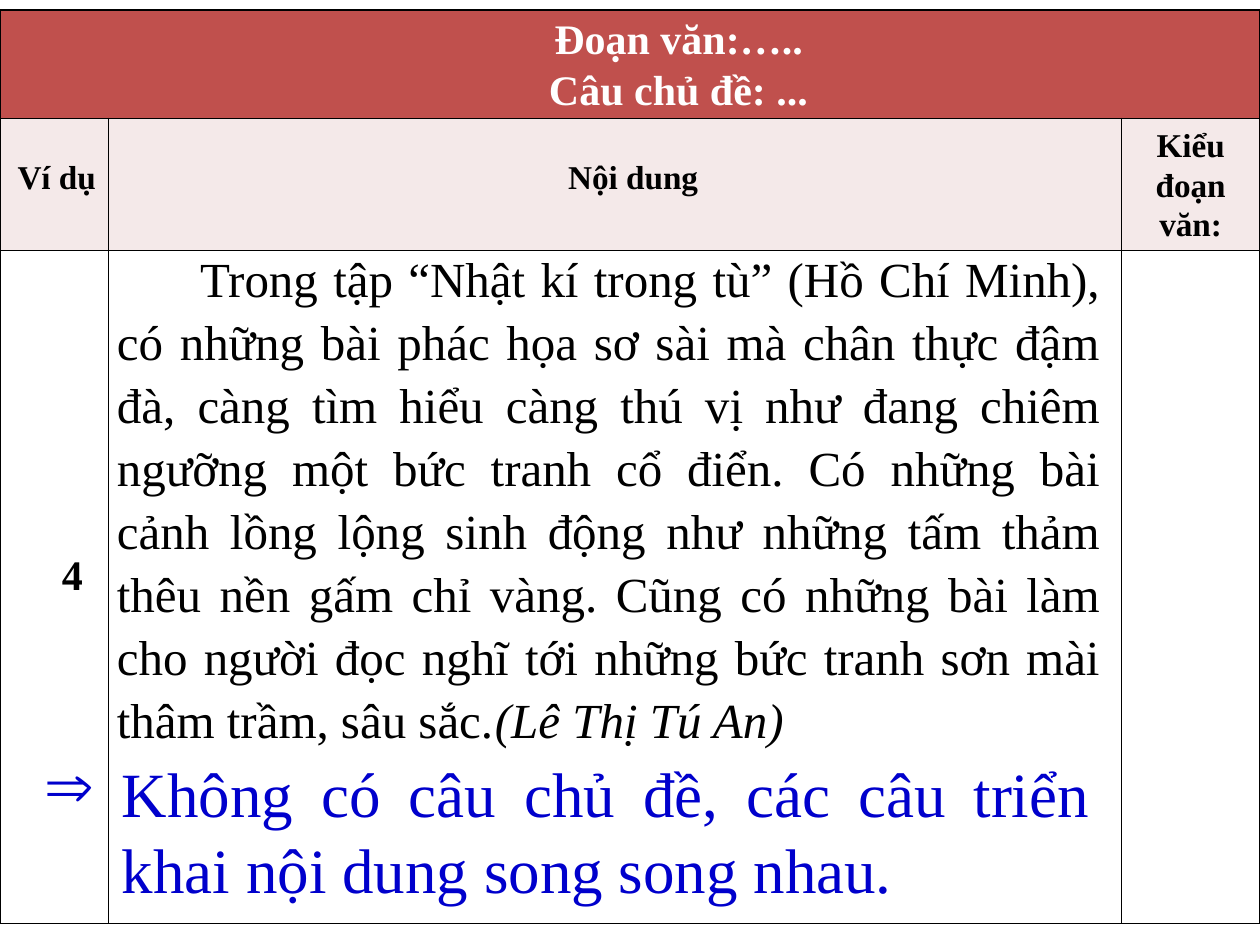
from pptx import Presentation
from pptx.dml.color import RGBColor
from pptx.enum.text import MSO_ANCHOR, PP_ALIGN
from pptx.oxml.ns import qn
from pptx.util import Inches, Pt
from lxml.etree import SubElement

FONT = "Times New Roman"
BLACK = RGBColor(0x00, 0x00, 0x00)
WHITE = RGBColor(0xFF, 0xFF, 0xFF)
RED = RGBColor(0xC0, 0x50, 0x4D)
PINK = RGBColor(0xF4, 0xE9, 0xE9)
BLUE = RGBColor(0x00, 0x00, 0xCC)

COLS = [0.86, 8.04, 1.1]
ROWS = [0.86, 1.05, 5.34]
FILLS = [RED, PINK, WHITE]
TIGHT = Pt(13.8)

POEM = (
    "Trong tập “Nhật kí trong tù” (Hồ Chí Minh), có những bài phác họa sơ sài "
    "mà chân thực đậm đà, càng tìm hiểu càng thú vị như đang chiêm ngưỡng một "
    "bức tranh cổ điển. Có những bài cảnh lồng lộng sinh động như những tấm "
    "thảm thêu nền gấm chỉ vàng. Cũng có những bài làm cho người đọc nghĩ tới "
    "những bức tranh sơn mài thâm trầm, sâu sắc.\t"
)
AUTHOR = "(Lê Thị Tú An)"
NOTE = "Không có câu chủ đề, các câu triển khai nội dung song song nhau."


def style(run, size, color=BLACK, bold=False, italic=False):
    font = run.font
    font.name, font.size = FONT, Pt(size)
    font.bold, font.italic = bold, italic
    font.color.rgb = color


def indent(para, left, first):
    props = para._p.get_or_add_pPr()
    props.set("marL", str(Inches(left)))
    props.set("indent", str(Inches(first)))
    return props


def border(cell):
    props = cell._tc.get_or_add_tcPr()
    for side in ("lnL", "lnR", "lnT", "lnB"):
        line = SubElement(props, qn(f"a:{side}"), w=str(Pt(1)))
        fill = SubElement(line, qn("a:solidFill"))
        SubElement(fill, qn("a:srgbClr"), val=str(BLACK))


def write(cell, text, size, color=BLACK, left=0, first=0, space=TIGHT, before=0):
    cell.text_frame.text = text
    for para in cell.text_frame.paragraphs:
        para.alignment = PP_ALIGN.CENTER
        para.line_spacing = space
        para.space_before = Pt(before)
        indent(para, left, first)
        for run in para.runs:
            style(run, size, color, bold=True)


def add_grid(slide):
    frame = slide.shapes.add_table(
        len(ROWS), len(COLS), Inches(0), Inches(0.08),
        Inches(sum(COLS)), Inches(sum(ROWS)))
    table = frame.table
    for col, width in zip(table.columns, COLS):
        col.width = Inches(width)
    for row, height, fill in zip(table.rows, ROWS, FILLS):
        row.height = Inches(height)
        for cell in row.cells:
            border(cell)
            cell.fill.solid()
            cell.fill.fore_color.rgb = fill
            cell.vertical_anchor = MSO_ANCHOR.MIDDLE
            cell.margin_left = cell.margin_right = Inches(0.03)
            cell.margin_top = cell.margin_bottom = 0
    table.cell(0, 0).merge(table.cell(0, 2))
    return table


def add_box(slide, left, top, width, height):
    box = slide.shapes.add_textbox(
        Inches(left), Inches(top), Inches(width), Inches(height))
    box.text_frame.word_wrap = True
    para = box.text_frame.paragraphs[0]
    para.alignment = PP_ALIGN.JUSTIFY
    return para


def main():
    prs = Presentation()
    prs.slide_width, prs.slide_height = Inches(10), Inches(7.5)
    slide = prs.slides.add_slide(prs.slide_layouts[6])

    # Table with heading, column names and example number
    table = add_grid(slide)
    write(table.cell(0, 0), "Đoạn văn:…..\nCâu chủ đề: ...", 24, WHITE,
          left=0.77, space=1.07, before=0.4)
    write(table.cell(1, 0), "Ví dụ", 19, first=0.04)
    write(table.cell(1, 1), "Nội dung", 19, left=0.29)
    write(table.cell(1, 2), "Kiểu đoạn văn:", 19, space=1.07)
    write(table.cell(2, 0), "4", 24, left=0.29)

    # Example paragraph, with its author set at a tab stop
    para = add_box(slide, 0.83, 1.89, 8, 4.61)
    para.line_spacing = 1.07
    tabs = SubElement(indent(para, 0, 0.66), qn("a:tabLst"))
    SubElement(tabs, qn("a:tab"), pos=str(Inches(4.84)), algn="l")
    for text, slant in ((POEM, False), (AUTHOR, True)):
        run = para.add_run()
        run.text = text
        style(run, 28, italic=slant)

    # Conclusion with an arrow bullet
    para = add_box(slide, 0.25, 5.94, 8.5, 1.31)
    SubElement(indent(para, 0.62, -0.62), qn("a:buChar"), char="⇒")
    para.text = NOTE
    style(para.runs[0], 36, BLUE)

    prs.save("out.pptx")


if __name__ == "__main__":
    main()
